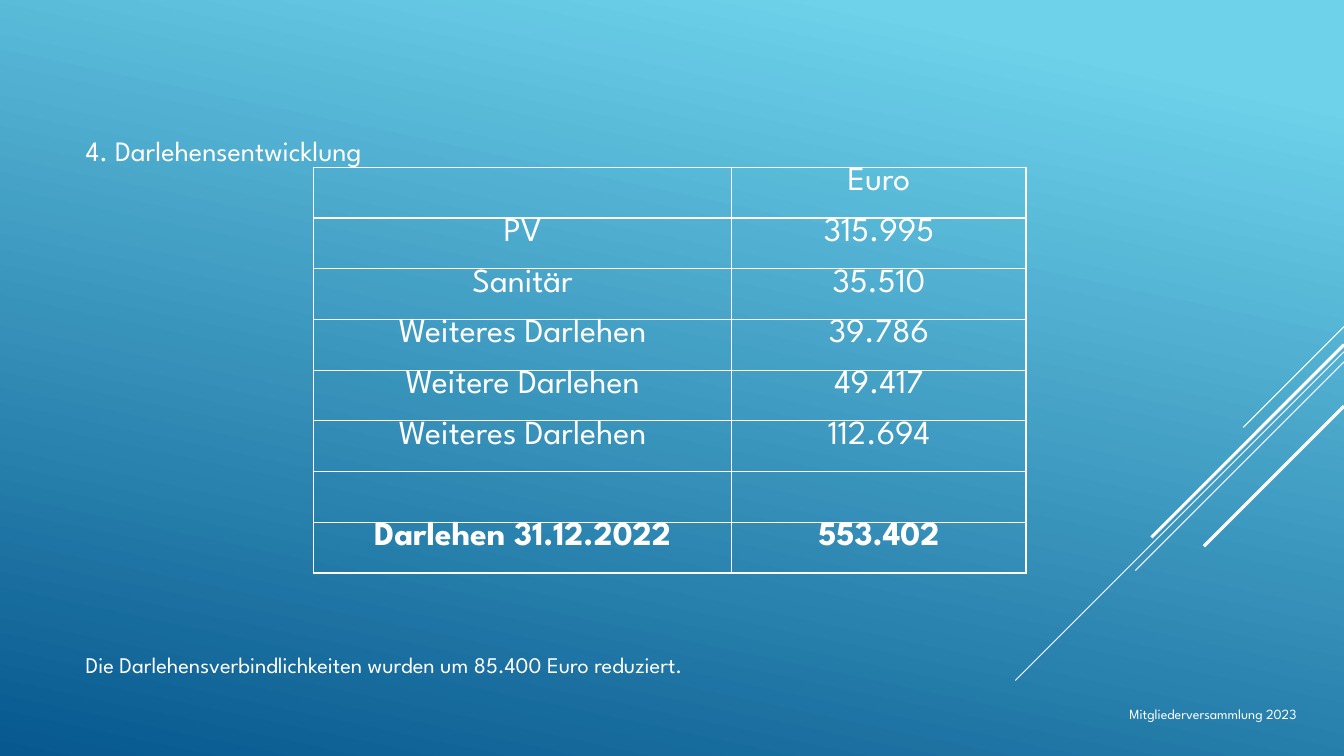
from lxml.etree import SubElement
from pptx import Presentation
from pptx.dml.color import RGBColor
from pptx.enum.shapes import MSO_CONNECTOR
from pptx.enum.text import MSO_ANCHOR, MSO_AUTO_SIZE, PP_ALIGN
from pptx.oxml.ns import qn
from pptx.util import Inches, Pt

COLORS = {"light": "6ED2EB", "dark": "06588E", "white": "FFFFFF"}
COLUMNS, ROWS = 160, 90

deck = Presentation()
deck.slide_width, deck.slide_height = Inches(13.33), Inches(7.5)
column, row = deck.slide_width / COLUMNS, deck.slide_height / ROWS
page = deck.slides.add_slide(deck.slide_layouts[1])


def place(left, top, width, height):
    return [int(left * column), int(top * row), int(width * column), int(height * row)]


def write(frame, text, size, align, bold=False):
    paragraph = frame.paragraphs[0]
    paragraph.alignment = align
    paragraph.space_before = Pt(0)
    span = paragraph.add_run()
    span.text = text
    for name, value in {"name": "League Spartan", "size": Pt(size), "bold": bold}.items():
        setattr(span.font, name, value)
    span.font.color.rgb = RGBColor.from_string(COLORS["white"])
    return paragraph


background = page.background.fill
background.gradient()
background.gradient_angle = 258
for stop, position, color in zip(background.gradient_stops, (0.1, 1), ("light", "dark")):
    stop.position = position
    stop.color.rgb = RGBColor.from_string(COLORS[color])

diagonals = [
    (38.88, 12, 0.75),
    (41.88, 39.12, 0.75),
    (43.08, 24.84, 0.75),
    (41.04, 22.92, 2.25),
    (48.36, 16.68, 2.25),
]
for top, reach, weight in diagonals:
    ends = place(COLUMNS, top, COLUMNS - reach, top + reach)
    diagonal = page.shapes.add_connector(MSO_CONNECTOR.STRAIGHT, *ends)
    diagonal.line.color.rgb = RGBColor.from_string(COLORS["white"])
    diagonal.line.width = Pt(weight)
    SubElement(diagonal._element.spPr, qn("a:effectLst"))

heading, remark = page.shapes.title, page.placeholders[1]
statements = [
    (heading, 14.88, 20, "4. Darlehensentwicklung"),
    (remark, 76.08, 16, "Die Darlehensverbindlichkeiten wurden um 85.400 Euro reduziert."),
]
for box, top, size, text in statements:
    box.left, box.top, box.width, box.height = place(9, top, 123.84, 6)
    frame_format = {
        "word_wrap": True,
        "auto_size": MSO_AUTO_SIZE.NONE,
        "vertical_anchor": MSO_ANCHOR.MIDDLE,
    }
    for name, value in frame_format.items():
        setattr(box.text_frame, name, value)
    paragraph = write(box.text_frame, text, size, PP_ALIGN.LEFT)
    properties = paragraph._p.get_or_add_pPr()
    properties.set("marL", "0")
    properties.set("indent", "0")
    SubElement(properties, qn("a:buNone"))

loans = [
    ("", "Euro"),
    ("PV", "315.995"),
    ("Sanitär", "35.510"),
    ("Weiteres Darlehen", "39.786"),
    ("Weitere Darlehen", "49.417"),
    ("Weiteres Darlehen", "112.694"),
    ("", ""),
    ("Darlehen 31.12.2022", "553.402"),
]
widths, line_height = (49.8, 35.04), 6.04
area = place(37.32, 19.92, sum(widths), line_height * len(loans))
table = page.shapes.add_table(len(loans), len(widths), *area).table
table.first_row = table.horz_banding = False
for table_column, width in zip(table.columns, widths):
    table_column.width = int(width * column)
for line, values in enumerate(loans):
    table.rows[line].height = int(line_height * row)
    for cell, value in zip(table.rows[line].cells, values):
        cell.margin_top = cell.margin_bottom = 0
        cell.vertical_anchor = MSO_ANCHOR.TOP
        for side in ("lnL", "lnR", "lnT", "lnB"):
            border = SubElement(cell._tc.get_or_add_tcPr(), qn(f"a:{side}"), w=str(Pt(1)))
            paint = SubElement(border, qn("a:solidFill"))
            SubElement(paint, qn("a:srgbClr"), val=COLORS["white"])
        cell.fill.background()
        if value:
            write(cell.text_frame, value, 24, PP_ALIGN.CENTER, line == len(loans) - 1)

footer = page.shapes.add_textbox(*place(56.52, 83.4, 99, 4.8))
footer.text_frame.word_wrap = True
write(footer.text_frame, "Mitgliederversammlung 2023", 10, PP_ALIGN.RIGHT)

deck.save("out.pptx")
